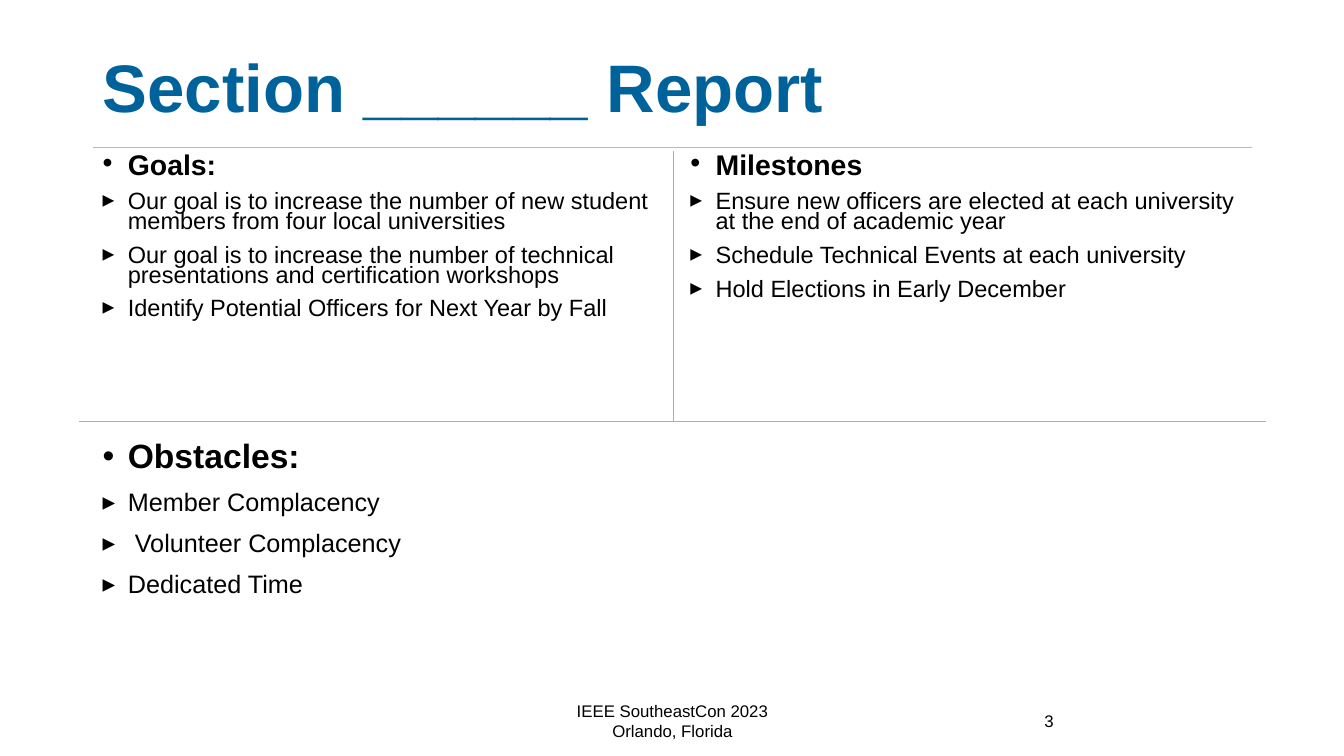
from lxml import etree
from pptx import Presentation
from pptx.dml.color import RGBColor
from pptx.enum import shapes, text
from pptx.oxml import ns
from pptx.util import Inches, Pt

COLORS = {"title": "00629B", "body": "000000", "rule": "F6BE07", "divider": "FFA300"}
MIDDLE = text.MSO_ANCHOR.MIDDLE
LEFT, RIGHT_COLUMN, COLUMN_WIDTH = 0.92, 6.75, 5.67

report = Presentation()
report.slide_width, report.slide_height = Inches(13.33), Inches(7.5)
slide = report.slides.add_slide(report.slide_layouts[6])


def add_text(box, lines, anchor=text.MSO_ANCHOR.TOP, color="body", bullets=None, **formats):
    """Place a text box; each line is (wording, size, bold)."""
    frame = slide.shapes.add_textbox(*map(Inches, box)).text_frame
    frame.word_wrap = True
    frame.vertical_anchor = anchor
    for i, (wording, size, bold) in enumerate(lines):
        paragraph = frame.paragraphs[0] if i == 0 else frame.add_paragraph()
        for attribute, value in formats.items():
            if i or attribute != "space_before":
                setattr(paragraph, attribute, value)
        if bullets:
            properties = paragraph._p.get_or_add_pPr()
            properties.set("marL", str(Inches(0.25)))
            properties.set("indent", str(Inches(-0.25)))
            etree.SubElement(properties, ns.qn("a:buFont"), typeface="Arial")
            etree.SubElement(properties, ns.qn("a:buChar"), char=bullets[min(i, 1)])
        run = paragraph.add_run()
        run.text = wording
        for attribute, value in {"name": "Arial", "size": Pt(size), "bold": bold}.items():
            setattr(run.font, attribute, value)
        run.font.color.rgb = RGBColor.from_string(COLORS[color])


# Title
add_text((LEFT, 0.4, 10.26, 1), [("Section ______ Report", 48, True)],
         MIDDLE, "title", line_spacing=0.9)

# Goals, milestones and obstacles: a bold heading over its points
sections = [
    ((LEFT, 1.5, COLUMN_WIDTH, 2.25), 20.3, 16.8, 0.7, "Goals:", [
        "Our goal is to increase the number of new student members from four local universities",
        "Our goal is to increase the number of technical presentations and certification workshops",
        "Identify Potential Officers for Next Year by Fall"]),
    ((RIGHT_COLUMN, 1.5, COLUMN_WIDTH, 2.43), 20.3, 16.8, 0.7, "Milestones", [
        "Ensure new officers are elected at each university at the end of academic year",
        "Schedule Technical Events at each university",
        "Hold Elections in Early December"]),
    ((LEFT, 4.31, 11.5, 2.25), 24, 18, 0.9, "Obstacles:", [
        "Member Complacency", " Volunteer Complacency", "Dedicated Time"]),
]
for box, heading_size, point_size, spacing, heading, points in sections:
    lines = [(heading, heading_size, True)] + [(point, point_size, False) for point in points]
    add_text(box, lines, bullets="•▸", line_spacing=spacing, space_before=Pt(10))

# Footer and page number
add_text((4.42, 6.95, 4.5, 0.4),
         [("IEEE SoutheastCon 2023", 12, False), ("Orlando, Florida", 12, False)],
         MIDDLE, alignment=text.PP_ALIGN.CENTER)
add_text((10.26, 6.95, 2.16, 0.4), [("3", 12, False)], MIDDLE)

# Title rule, column divider and row divider
for ends, color, width in [
    ((LEFT, 1.46, 12.42, 1.46), "rule", 0.5),
    ((6.68, 1.5, 6.68, 4.18), "divider", 1),
    ((0.78, 4.18, 12.56, 4.18), "divider", 1),
]:
    divider = slide.shapes.add_connector(shapes.MSO_CONNECTOR.STRAIGHT, *map(Inches, ends))
    divider.line.color.rgb = RGBColor.from_string(COLORS[color])
    divider.line.width = Pt(width)
    etree.SubElement(divider._element.spPr, ns.qn("a:effectLst"))

report.save("out.pptx")
